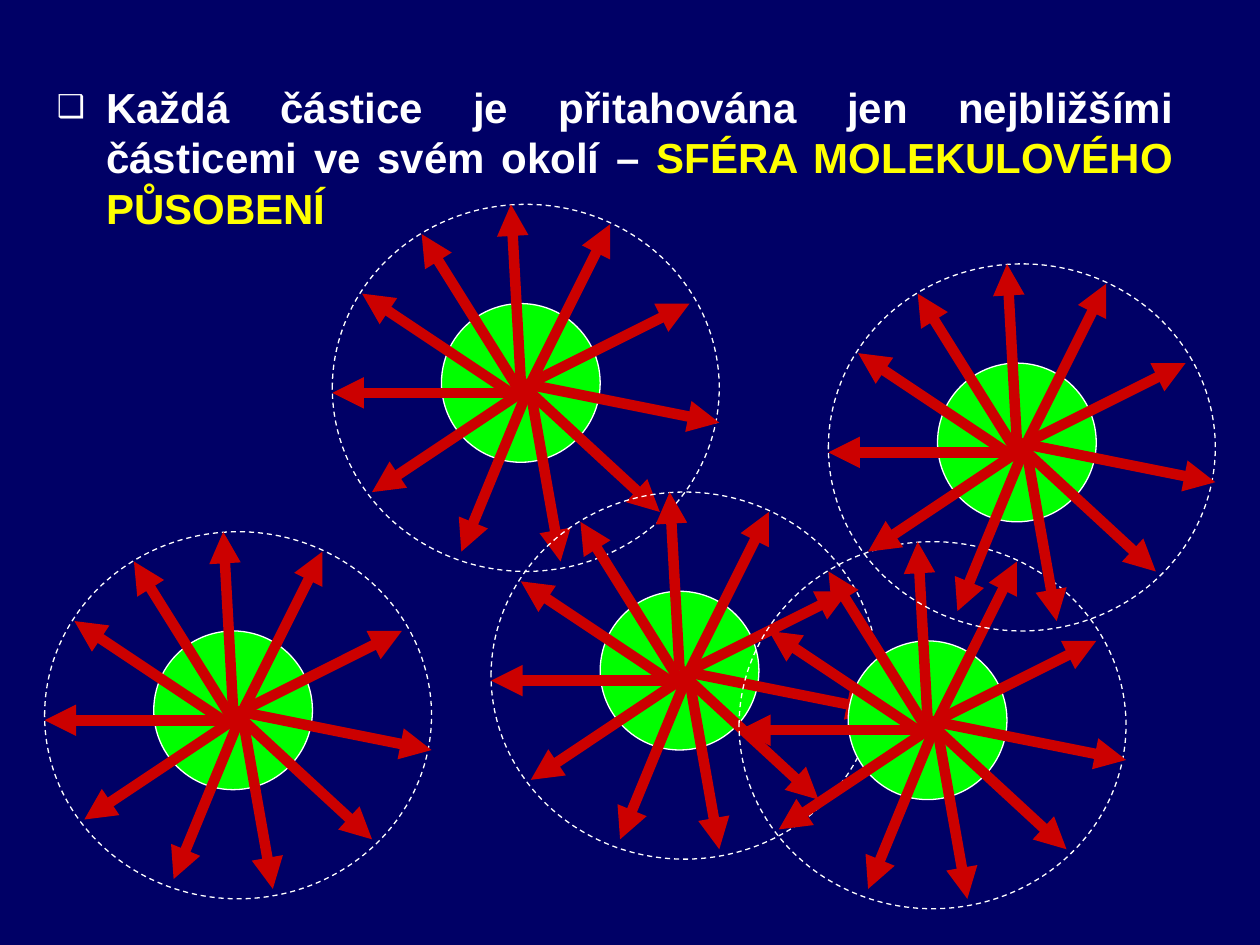
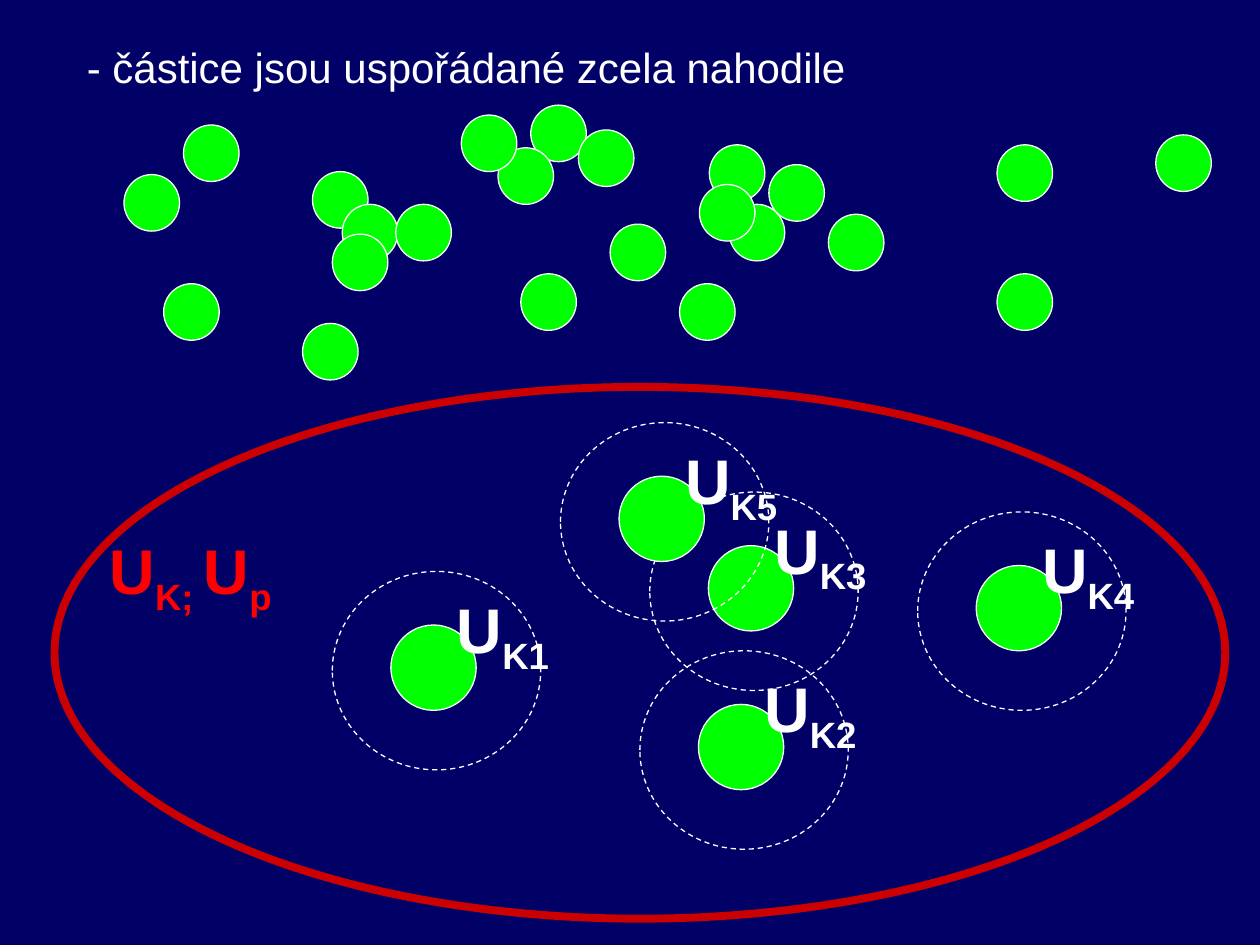
from lxml.etree import SubElement
from pptx import Presentation
from pptx.dml.color import RGBColor
from pptx.enum.dml import MSO_LINE
from pptx.enum.shapes import MSO_CONNECTOR, MSO_SHAPE
from pptx.enum.text import MSO_AUTO_SIZE, PP_ALIGN
from pptx.oxml.ns import qn
from pptx.util import Inches, Pt

# Shared look
hue = RGBColor.from_string
NAVY, WHITE, LIME = "000066", "FFFFFF", "00FF00"
RED, BRIGHT, YELLOW = "CC0000", "FF0000", "FFFF00"
FRAME = {"word_wrap": True, "auto_size": MSO_AUTO_SIZE.NONE}
TITLE = {"name": "Arial", "size": Pt(24)}
LABEL = {"name": "Arial", "size": Pt(36), "bold": True}

deck = Presentation()
deck.slide_width, deck.slide_height = Inches(10), Inches(7.5)
back = deck.slide_master.background.fill
back.solid()
back.fore_color.rgb = hue(NAVY)

# Square grid: 127 columns across the slide
COLS = 127
unit = deck.slide_width / COLS


def oval(page, box, fill=None, line=WHITE, width=0.75, dash=None):
    shape = page.shapes.add_shape(MSO_SHAPE.OVAL, *[int(n * unit) for n in box])
    shape.shadow.inherit = False
    if fill:
        shape.fill.solid()
        shape.fill.fore_color.rgb = hue(fill)
    else:
        shape.fill.background()
    shape.line.color.rgb = hue(line)
    for key, val in {"width": Pt(width), "dash_style": dash}.items():
        setattr(shape.line, key, val)


def write(page, box, runs, style):
    """Add a one-paragraph text box; runs hold text, colour, baseline shift."""
    frame = page.shapes.add_textbox(*[int(n * unit) for n in box]).text_frame
    for key, val in FRAME.items():
        setattr(frame, key, val)
    para = frame.paragraphs[0]
    for text, tint, shift in runs:
        run = para.add_run()
        run.text = text
        for key, val in style.items():
            setattr(run.font, key, val)
        run.font.color.rgb = hue(tint)
        if shift:
            run.font._element.set("baseline", str(shift * 1000))
    return para


# Slide 1: spheres of molecular action
page = deck.slides.add_slide(deck.slide_layouts[6])
para = write(page, (4.5, 7.6, 115, 16.5), [
    ("Každá částice je přitahována jen nejbližšími částicemi ve svém okolí – ", WHITE, 0),
    ("SFÉRA MOLEKULOVÉHO PŮSOBENÍ", YELLOW, 0),
], TITLE | {"bold": True})
para.alignment = PP_ALIGN.JUSTIFY

# Square bullet with hanging indent
props = para._p.get_or_add_pPr()
props.set("marL", str(Inches(0.39)))
props.set("indent", str(-Inches(0.39)))
tint = SubElement(props, qn("a:buClr"))
SubElement(tint, qn("a:srgbClr"), val=WHITE)
SubElement(props, qn("a:buSzPct"), val="75000")
SubElement(props, qn("a:buFont"), typeface="Arial")
SubElement(props, qn("a:buChar"), char="❑")

# Arrow ends, counted from the corner of a sphere
RAYS = [
    (19, 18, 39, 22), (20, 19, 33, 31), (20, 18, 36, 10), (20, 18, 13, 35),
    (20, 19, 0, 19), (18, 19, 3, 9), (19, 19, 4, 29), (20, 18, 28, 2),
    (19, 18, 18, 0), (19, 19, 9, 3), (20, 19, 23, 36),
]
for x, y in [(33.5, 20.6), (49.5, 49.6), (74.5, 54.6), (83.5, 26.6), (4.5, 53.6)]:
    oval(page, (x, y, 39, 37), dash=MSO_LINE.DASH)
    oval(page, (x + 11, y + 10, 16, 16), LIME)
    for x1, y1, x2, y2 in RAYS:
        ends = [int(n * unit) for n in (x + x1, y + y1, x + x2, y + y2)]
        ray = page.shapes.add_connector(MSO_CONNECTOR.STRAIGHT, *ends)
        ray.line.color.rgb = hue(RED)
        ray.line.width = Pt(6)
        SubElement(ray.line._get_or_add_ln(), qn("a:tailEnd"), type="triangle")
        SubElement(ray._element.spPr, qn("a:effectLst"))

# Slide 2: random order of particles
page = deck.slides.add_slide(deck.slide_layouts[6])
para = write(page, (7.5, 3.6, 115, 6.4),
             [("- částice jsou uspořádané zcela nahodile", WHITE, 0)], TITLE)
props = para._p.get_or_add_pPr()
props.set("marL", str(Inches(0.19)))
props.set("indent", str(-Inches(0.19)))

# Loose particles
SPOTS = [
    (31.5, 17.3), (18.5, 12.6), (34.5, 20.6), (53.5, 10.6), (50.2, 14.9),
    (46.5, 11.6), (58.3, 13.1), (30.5, 32.6), (100.5, 27.6), (52.5, 27.6),
    (73.5, 20.6), (71.5, 14.6), (39.9, 20.6), (33.5, 23.6), (12.5, 17.6),
    (16.5, 28.6), (116.5, 13.6), (68.5, 28.6), (70.5, 18.6), (61.5, 22.6),
    (83.5, 21.6), (100.5, 14.6), (77.5, 16.6),
]
for x, y in SPOTS:
    oval(page, (x, y, 5.6, 5.7), LIME)

# Whole system with its energies
oval(page, (5.5, 39, 118, 53.6), line=RED, width=4.5)
write(page, (9.8, 53, 30, 8.9), [
    ("U", BRIGHT, 0), ("K; ", BRIGHT, -25), ("U", BRIGHT, 0), ("p", BRIGHT, -25),
], LABEL)

# Particles with their own energy
for name, x, y in [("K2", 64.5, 65.6), ("K1", 33.5, 57.6), ("K4", 92.5, 51.6),
                   ("K3", 65.5, 49.6), ("K5", 56.5, 42.6)]:
    oval(page, (x, y, 21, 20), dash=MSO_LINE.DASH)
    oval(page, (x + 5.9, y + 5.4, 8.6, 8.6), LIME)
    write(page, (x + 11.3, y + 1.3, 12.6, 8.9),
          [("U", WHITE, 0), (name, WHITE, -25)], LABEL)

deck.save("out.pptx")
